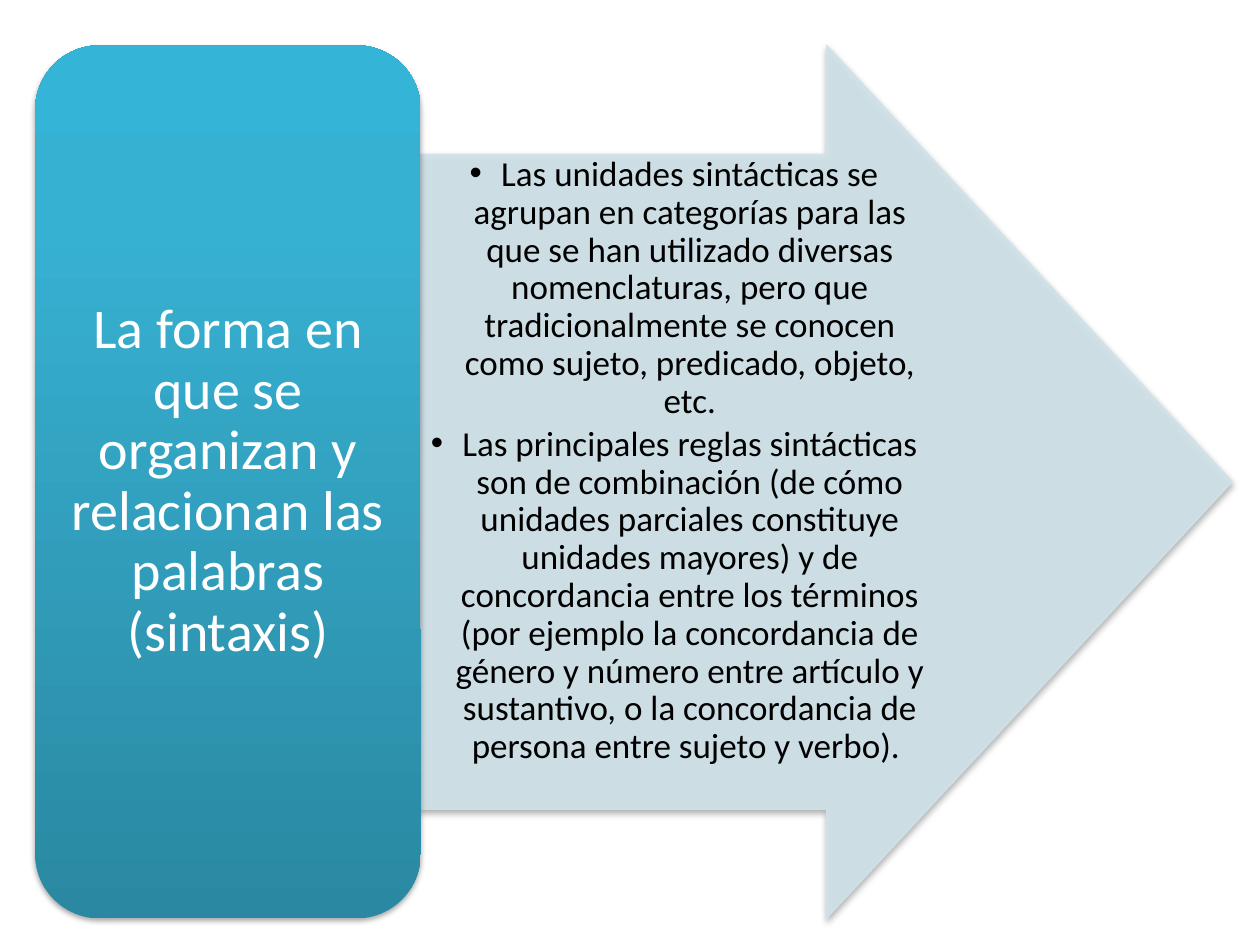
from dataclasses import dataclass

from lxml.etree import SubElement
from pptx import Presentation
from pptx.dml.color import RGBColor
from pptx.enum.shapes import MSO_SHAPE
from pptx.enum.text import MSO_ANCHOR, PP_ALIGN
from pptx.oxml.ns import qn
from pptx.util import Inches, Pt


@dataclass(frozen=True)
class Theme:
    font: str = "Calibri"
    heading_size: int = 32
    body_size: int = 20
    heading_color: str = "FFFFFF"
    body_color: str = "000000"
    arrow_color: str = "D0E3EA"
    shadow_color: str = "000000"
    panel_stops: tuple = ((0, "2A88A2"), (80, "37B1D2"), (100, "34B4D6"))


@dataclass(frozen=True)
class Box:
    left: float
    top: float
    width: float
    height: float

    def lengths(self) -> list:
        return [Inches(v) for v in (self.left, self.top, self.width, self.height)]


@dataclass(frozen=True)
class TextBlock:
    box: Box
    paragraphs: tuple
    size: int
    color: str
    anchor: MSO_ANCHOR
    side_inset: float
    end_inset: float
    space_after: float = 0
    bulleted: bool = False


THEME = Theme()
ARROW = Box(3.34, 0.36, 6.44, 6.93)
PANEL = Box(0.28, 0.36, 3.06, 6.93)
TEXT_BLOCKS = (
    TextBlock(
        Box(3.34, 1.23, 4.02, 5.2),
        (
            "Las unidades sintácticas se agrupan en categorías para las que se han "
            "utilizado diversas nomenclaturas, pero que tradicionalmente se conocen "
            "como sujeto, predicado, objeto, etc.",
            "Las principales reglas sintácticas son de combinación (de cómo unidades "
            "parciales constituye unidades mayores) y de concordancia entre los "
            "términos (por ejemplo la concordancia de género y número entre artículo "
            "y sustantivo, o la concordancia de persona entre sujeto y verbo). ",
        ),
        THEME.body_size, THEME.body_color, MSO_ANCHOR.TOP, 0.01, 0.01, 3, True,
    ),
    TextBlock(
        Box(0.43, 0.51, 2.76, 6.63),
        ("La forma en que se organizan y relacionan las palabras (sintaxis)",),
        THEME.heading_size, THEME.heading_color, MSO_ANCHOR.MIDDLE, 0.13, 0.07,
    ),
)


def apply_format(target, values: dict) -> None:
    for name, value in values.items():
        setattr(target, name, value)


def add_color(parent, color: str, alpha: int = 100) -> None:
    element = SubElement(parent, qn("a:srgbClr"), val=color)
    if alpha < 100:
        SubElement(element, qn("a:alpha"), val=str(alpha * 1000))


def add_shadow(shape) -> None:
    shape.shadow.inherit = False
    effects = shape._element.spPr.find(qn("a:effectLst"))
    shadow = SubElement(
        effects, qn("a:outerShdw"), blurRad=str(Pt(3.1)), dist=str(Pt(1.8)),
        dir="5400000", rotWithShape="0",
    )
    add_color(shadow, THEME.shadow_color, 35)


def add_arrow(slide) -> None:
    shape = slide.shapes.add_shape(MSO_SHAPE.RIGHT_ARROW, *ARROW.lengths())
    shape.adjustments[0], shape.adjustments[1] = 0.75, 0.5
    shape.line.width = Pt(0.75)
    for fill in (shape.fill, shape.line.fill):
        fill.solid()
        fill.fore_color.rgb = RGBColor.from_string(THEME.arrow_color)
    for color in shape._element.spPr.iter(qn("a:srgbClr")):
        SubElement(color, qn("a:alpha"), val="90000")
    add_shadow(shape)


def add_panel(slide) -> None:
    shape = slide.shapes.add_shape(MSO_SHAPE.ROUNDED_RECTANGLE, *PANEL.lengths())
    shape.fill.gradient()
    shape.fill.gradient_angle = 90
    stops = shape._element.spPr.find(".//" + qn("a:gsLst"))
    for stop in list(stops):
        stops.remove(stop)
    for position, color in THEME.panel_stops:
        add_color(SubElement(stops, qn("a:gs"), pos=str(position * 1000)), color)
    shape.line.fill.background()
    add_shadow(shape)


def add_bullet(paragraph) -> None:
    properties = paragraph._p.get_or_add_pPr()
    properties.set("marL", str(Inches(0.25)))
    properties.set("indent", str(Inches(-0.25)))
    SubElement(properties, qn("a:buFont"), typeface="Arial")
    SubElement(properties, qn("a:buChar"), char="•")


def add_text(slide, block: TextBlock) -> None:
    frame = slide.shapes.add_textbox(*block.box.lengths()).text_frame
    apply_format(frame, {
        "word_wrap": True,
        "vertical_anchor": block.anchor,
        "margin_left": Inches(block.side_inset),
        "margin_right": Inches(block.side_inset),
        "margin_top": Inches(block.end_inset),
        "margin_bottom": Inches(block.end_inset),
    })
    for index, text in enumerate(block.paragraphs):
        paragraph = frame.add_paragraph() if index else frame.paragraphs[0]
        apply_format(paragraph, {
            "alignment": PP_ALIGN.CENTER,
            "line_spacing": 0.9,
            "space_after": Pt(block.space_after),
        })
        if block.bulleted:
            add_bullet(paragraph)
        run = paragraph.add_run()
        run.text = text
        apply_format(run.font, {"name": THEME.font, "size": Pt(block.size)})
        run.font.color.rgb = RGBColor.from_string(block.color)


def main() -> None:
    presentation = Presentation()
    apply_format(presentation, {"slide_width": Inches(10), "slide_height": Inches(7.5)})
    slide = presentation.slides.add_slide(presentation.slide_layouts[6])
    add_arrow(slide)
    add_panel(slide)
    for block in TEXT_BLOCKS:
        add_text(slide, block)
    presentation.save("out.pptx")


if __name__ == "__main__":
    main()
